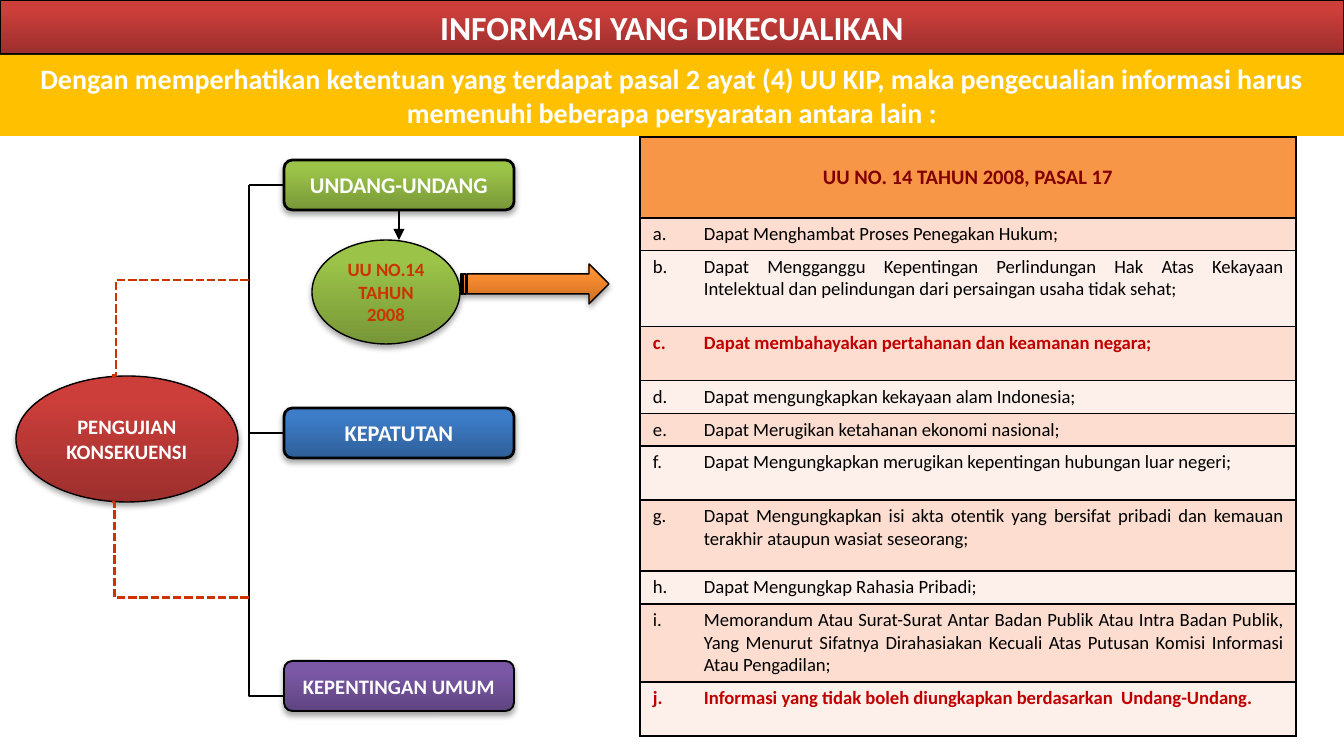
from lxml import etree
from pptx import Presentation
from pptx.dml.color import RGBColor
from pptx.enum.dml import MSO_LINE
from pptx.enum.shapes import MSO_CONNECTOR, MSO_SHAPE
from pptx.enum.text import MSO_ANCHOR, PP_ALIGN
from pptx.oxml.ns import qn
from pptx.util import Pt

EMU_PER_PX = 914400 / 134.4
FONT = "Calibri"
CENTER, JUSTIFY = PP_ALIGN.CENTER, PP_ALIGN.JUSTIFY
TOP, MIDDLE = MSO_ANCHOR.TOP, MSO_ANCHOR.MIDDLE
STRAIGHT, ELBOW = MSO_CONNECTOR.STRAIGHT, MSO_CONNECTOR.ELBOW
RECT, ROUNDED = MSO_SHAPE.RECTANGLE, MSO_SHAPE.ROUNDED_RECTANGLE
OVAL, ARROW = MSO_SHAPE.OVAL, MSO_SHAPE.STRIPED_RIGHT_ARROW
DASH = MSO_LINE.SQUARE_DOT

BLACK = RGBColor(0x00, 0x00, 0x00)
WHITE = RGBColor(0xFF, 0xFF, 0xFF)
YELLOW = RGBColor(0xFF, 0xC0, 0x00)
ORANGE = RGBColor(0xF7, 0x96, 0x46)
MAROON = RGBColor(0x80, 0x00, 0x00)
CRIMSON = RGBColor(0xC0, 0x00, 0x00)
RUST = RGBColor(0xCC, 0x33, 0x00)
PEACH = RGBColor(0xFC, 0xDD, 0xCF)
PALE = RGBColor(0xFD, 0xEF, 0xE9)
# Gradients: bottom colour, top colour
GREEN = (RGBColor(0x77, 0x97, 0x37), RGBColor(0x9B, 0xC3, 0x48))
BLUE = (RGBColor(0x2F, 0x5F, 0x99), RGBColor(0x3D, 0x7C, 0xC7))
PURPLE = (RGBColor(0x5F, 0x44, 0x80), RGBColor(0x7B, 0x58, 0xA6))
RED = (RGBColor(0x9C, 0x2F, 0x2D), RGBColor(0xCB, 0x3E, 0x3A))
AMBER = (RGBColor(0xCC, 0x6E, 0x20), RGBColor(0xFF, 0x90, 0x34))


def px(*values):
    return [round(value * EMU_PER_PX) for value in values]


def write(frame, text, size, color, align=CENTER, bold=True):
    para = frame.paragraphs[0]
    para.alignment = align
    span = para.add_run()
    span.text = text
    span.font.name, span.font.size, span.font.bold = FONT, Pt(size), bold
    span.font.color.rgb = color
    return para


deck = Presentation()
deck.slide_width, deck.slide_height = px(1344, 756)
page = deck.slides.add_slide(deck.slide_layouts[6])

# Table of exempted information: text, row height, highlighted
rows = [
    ("UU NO. 14 TAHUN 2008, PASAL 17", 81, False),
    ("Dapat Menghambat Proses Penegakan Hukum;", 32, False),
    ("Dapat Mengganggu Kepentingan Perlindungan Hak Atas Kekayaan Intelektual "
     "dan pelindungan dari persaingan usaha tidak sehat;", 76, False),
    ("Dapat membahayakan pertahanan dan keamanan negara;", 54, True),
    ("Dapat mengungkapkan kekayaan alam Indonesia;", 33, False),
    ("Dapat Merugikan ketahanan ekonomi nasional;", 32, False),
    ("Dapat Mengungkapkan merugikan kepentingan hubungan luar negeri;", 54, False),
    ("Dapat Mengungkapkan isi akta otentik yang bersifat pribadi dan kemauan "
     "terakhir ataupun wasiat seseorang;", 71, False),
    ("Dapat Mengungkap Rahasia Pribadi;", 33, False),
    ("Memorandum Atau Surat-Surat Antar Badan Publik Atau Intra Badan Publik, "
     "Yang Menurut Sifatnya Dirahasiakan Kecuali Atas Putusan Komisi Informasi "
     "Atau Pengadilan;", 78, False),
    ("Informasi yang tidak boleh diungkapkan berdasarkan  Undang-Undang.", 54, True),
]
table_height = sum(height for _, height, _ in rows)
table = page.shapes.add_table(len(rows), 1, *px(640, 137, 656, table_height)).table
table.first_row = table.horz_banding = False
hanging = px(51)[0]
for index, (text, height, highlighted) in enumerate(rows):
    table.rows[index].height = px(height)[0]
    cell = table.cell(index, 0)
    cell.margin_left, cell.margin_right, cell.margin_top, cell.margin_bottom = px(13, 13, 5, 5)
    cell_props = cell._tc.get_or_add_tcPr()
    for side in ("a:lnL", "a:lnR", "a:lnT", "a:lnB"):
        border = etree.SubElement(cell_props, qn(side), w=str(Pt(1)))
        paint = etree.SubElement(border, qn("a:solidFill"))
        etree.SubElement(paint, qn("a:srgbClr"), val=str(BLACK))
    cell.fill.solid()
    if index == 0:
        cell.fill.fore_color.rgb = ORANGE
        cell.vertical_anchor = MIDDLE
        write(cell.text_frame, text, 11, MAROON)
        continue
    cell.fill.fore_color.rgb = PEACH if index % 2 else PALE
    color = CRIMSON if highlighted else BLACK
    para = write(cell.text_frame, text, 10, color, JUSTIFY, highlighted)
    para_props = para._p.get_or_add_pPr()
    para_props.set("marL", str(hanging))
    para_props.set("indent", str(-hanging))
    etree.SubElement(para_props, qn("a:buFont"), typeface="+mj-lt")
    etree.SubElement(para_props, qn("a:buAutoNum"), type="alphaLcPeriod", startAt=str(index))

# Shapes: preset, place, gradient, line width, text, size, text colour, anchor
shapes = [
    (ROUNDED, (284, 160, 230, 50), GREEN, 1.5, "UNDANG-UNDANG", 12, WHITE, MIDDLE),
    (ROUNDED, (284, 408, 230, 50), BLUE, 1.5, "KEPATUTAN", 12, WHITE, MIDDLE),
    (ROUNDED, (284, 661, 230, 50), PURPLE, 1, "KEPENTINGAN UMUM", 11, WHITE, MIDDLE),
    (ARROW, (461, 264, 148, 40), AMBER, 0.75, "", 10, WHITE, MIDDLE),
    (RECT, (0, 0, 1344, 54), RED, 0.75, "INFORMASI YANG DIKECUALIKAN", 18, WHITE, TOP),
    (OVAL, (16, 376, 222, 126), RED, 0.75, "PENGUJIAN KONSEKUENSI", 11, WHITE, MIDDLE),
    (OVAL, (312, 240, 148, 104), GREEN, 0.75, "UU NO.14 TAHUN 2008", 10, RUST, MIDDLE),
    (RECT, (0, 55, 1344, 81), None, 0,
     "Dengan memperhatikan ketentuan yang terdapat pasal 2 ayat (4) UU KIP, maka "
     "pengecualian informasi harus memenuhi beberapa persyaratan antara lain :", 15, WHITE, TOP),
]
drawn = []
for preset, place, gradient, width, text, size, color, anchor in shapes:
    box = page.shapes.add_shape(preset, *px(*place))
    box.shadow.inherit = False
    if gradient:
        box.fill.gradient()
        box.fill.gradient_angle = 90
        for stop, tone, position in zip(box.fill.gradient_stops, gradient, (0, 0.8)):
            stop.color.rgb, stop.position = tone, position
        box.line.color.rgb, box.line.width = BLACK, Pt(width)
        effects = box._element.spPr.find(qn("a:effectLst"))
        shadow = etree.SubElement(effects, qn("a:outerShdw"), blurRad=str(Pt(3.1)),
                                  dist=str(Pt(1.8)), dir="5400000", rotWithShape="0")
        tint = etree.SubElement(shadow, qn("a:srgbClr"), val=str(BLACK))
        etree.SubElement(tint, qn("a:alpha"), val="35000")
    else:
        box.fill.solid()
        box.fill.fore_color.rgb = YELLOW
        box.line.fill.background()
    if text:
        box.text_frame.word_wrap = True
        box.text_frame.vertical_anchor = anchor
        write(box.text_frame, text, size, color)
    drawn.append(box)
law_box, propriety_box = drawn[:2]

# Connectors: kind, ends, colour, bend in percent, joined box and its side
connectors = [
    (ELBOW, (249, 185, 284, 696), BLACK, 0, None, None),
    (STRAIGHT, (284, 185, 249, 185), BLACK, None, law_box, 1),
    (STRAIGHT, (284, 433, 249, 433), BLACK, None, propriety_box, 1),
    (ELBOW, (112, 376, 249, 280), RUST, 3, None, None),
    (ELBOW, (112, 502, 249, 598), RUST, 2, None, None),
    (STRAIGHT, (399, 210, 399, 240), BLACK, None, law_box, 2),
]
for kind, ends, color, bend, joined, side in connectors:
    link = page.shapes.add_connector(kind, *px(*ends))
    link.line.color.rgb, link.line.width = color, Pt(1.5)
    link_props = link._element.spPr
    if kind == ELBOW:
        guides = link_props.find(qn("a:prstGeom")).find(qn("a:avLst"))
        etree.SubElement(guides, qn("a:gd"), name="adj1", fmla=f"val {bend * 1000}")
    if color == RUST:
        link.line.dash_style = DASH
    if joined:
        link.begin_connect(joined, side)
    if side == 2:
        etree.SubElement(link_props.find(qn("a:ln")), qn("a:tailEnd"), type="triangle")
    etree.SubElement(link_props, qn("a:effectLst"))

deck.save("out.pptx")
